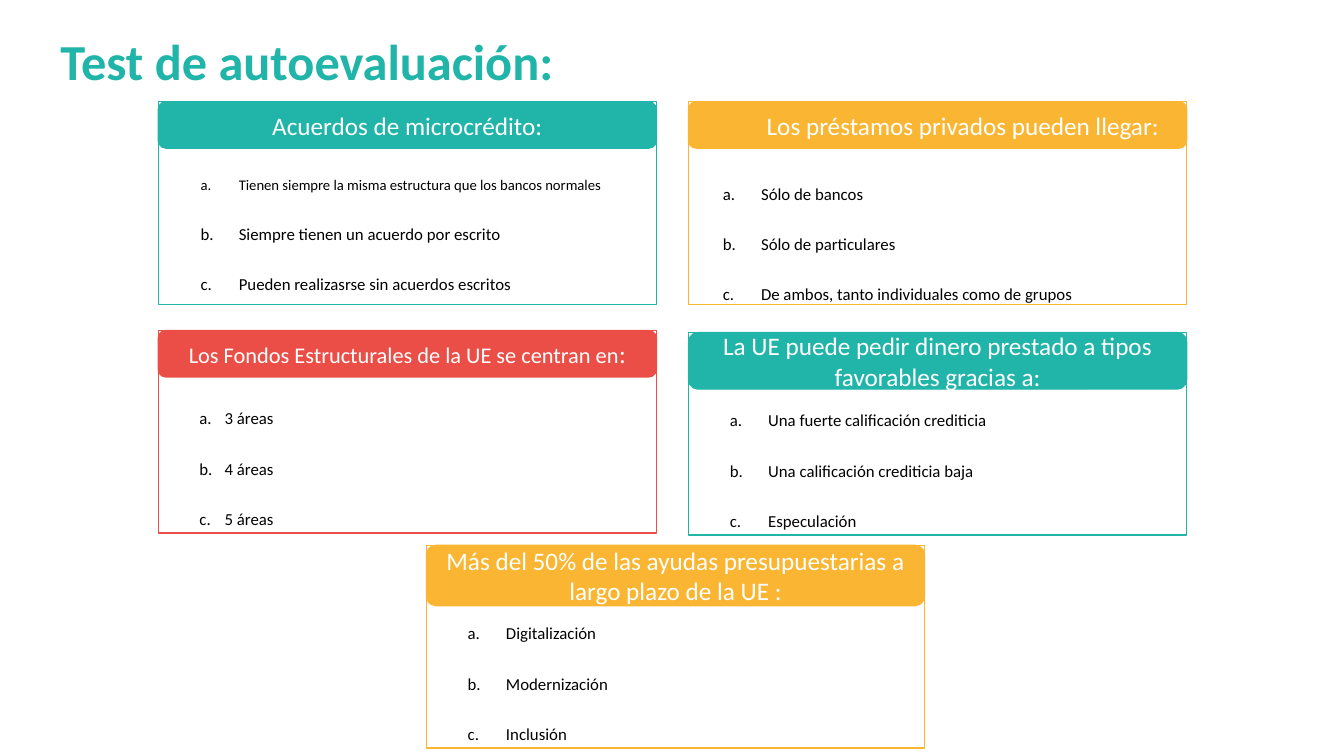
from lxml import etree
from pptx import Presentation
from pptx.dml.color import RGBColor
from pptx.enum.shapes import MSO_SHAPE
from pptx.enum.text import MSO_ANCHOR, PP_ALIGN
from pptx.oxml.ns import qn
from pptx.util import Inches, Pt

RECTANGLE = MSO_SHAPE.RECTANGLE
ROUNDED = MSO_SHAPE.ROUNDED_RECTANGLE
MIDDLE = MSO_ANCHOR.MIDDLE
CENTER = PP_ALIGN.CENTER

COLORS = {"teal": "21B4A9", "amber": "FAB632", "red": "EA4E46",
          "white": "FFFFFF", "black": "000000"}
CARD_WIDTH, CARD_HEIGHT = 4.94, 2.01
LEFT_COLUMN, RIGHT_COLUMN, CENTER_COLUMN = 1.57, 6.83, 4.23

# Each question: header runs and options are (text, size) pairs;
# options_box is the offset from the card's corner, then width and height
QUESTIONS = [
    dict(left=LEFT_COLUMN, top=1.01, color="teal", header_height=0.46,
         header=[("Acuerdos de microcrédito:", 18)],
         options_box=(0.32, 0.36, 4.21, 1.53),
         options=[("Tienen siempre la misma estructura que los bancos normales", 10.5),
                  ("Siempre tienen un acuerdo por escrito", 12),
                  ("Pueden realizasrse sin acuerdos escritos", 12)]),
    dict(left=RIGHT_COLUMN, top=1.01, color="amber", header_height=0.46,
         header=[("Los préstamos privados pueden llegar:", 18)], header_indent=0.5,
         options_box=(0.24, 0.46, 4.62, 1.53),
         options=[("Sólo de bancos", 12), ("Sólo de particulares", 12),
                  ("De ambos, tanto individuales como de grupos", 12)]),
    dict(left=LEFT_COLUMN, top=3.28, color="red", header_height=0.46,
         header=[("Los Fondos Estructurales de la UE se centran en", 16), (":", 18)],
         options_box=(0.31, 0.42, 1.77, 1.55), hanging=0.25,
         options=[("3 áreas", 12), ("4 áreas", 12), ("5 áreas", 12)]),
    dict(left=RIGHT_COLUMN, top=3.3, color="teal", header_height=0.56,
         header=[("La UE puede pedir dinero prestado a tipos favorables gracias a:", 18)],
         options_box=(0.31, 0.42, 3.59, 1.55),
         options=[("Una fuerte calificación crediticia", 12),
                  ("Una calificación crediticia baja", 12), ("Especulación", 12)]),
    dict(left=CENTER_COLUMN, top=5.41, color="amber", header_height=0.6,
         header=[("Más del 50% de las ayudas presupuestarias a largo plazo de la UE :", 18)],
         options_box=(0.31, 0.42, 3.29, 1.55),
         options=[("Digitalización", 12), ("Modernización", 12), ("Inclusión", 12)]),
]


class QuizSlide:
    font = "Calibri"
    line_width = Pt(1)

    def __init__(self, slide):
        self.slide = slide

    def rgb(self, color):
        return RGBColor.from_string(COLORS[color])

    def run(self, paragraph, text, size, color, bold=False):
        run = paragraph.add_run()
        run.text = text
        run.font.name = self.font
        run.font.size = Pt(size)
        run.font.bold = bold
        run.font.color.rgb = self.rgb(color)

    def indent(self, paragraph, margin, first_line=0):
        properties = paragraph._p.get_or_add_pPr()
        properties.set("marL", str(Inches(margin)))
        properties.set("indent", str(Inches(first_line)))
        return properties

    def title(self, text, left, top, width, height):
        box = self.slide.shapes.add_textbox(
            Inches(left), Inches(top), Inches(width), Inches(height))
        frame = box.text_frame
        frame.word_wrap = True
        frame.vertical_anchor = MIDDLE
        frame.margin_left = frame.margin_right = 0
        frame.margin_top = frame.margin_bottom = 0
        self.run(frame.paragraphs[0], text, 36, "teal", bold=True)

    def panel(self, kind, left, top, height, color, filled):
        panel = self.slide.shapes.add_shape(
            kind, Inches(left), Inches(top), Inches(CARD_WIDTH), Inches(height))
        panel.shadow.inherit = False
        panel.line.color.rgb = self.rgb(color)
        panel.line.width = self.line_width
        if filled:
            panel.fill.solid()
            panel.fill.fore_color.rgb = self.rgb(color)
        else:
            panel.fill.background()
        return panel

    def header(self, left, top, height, color, runs, indent):
        bar = self.panel(ROUNDED, left, top, height, color, filled=True)
        frame = bar.text_frame
        frame.word_wrap = True
        frame.vertical_anchor = MIDDLE
        heading = frame.paragraphs[0]
        heading.alignment = CENTER
        if indent:
            heading.level = 1
            self.indent(heading, indent)
        for text, size in runs:
            self.run(heading, text, size, "white")

    def options(self, left, top, width, height, options, hanging):
        box = self.slide.shapes.add_textbox(
            Inches(left), Inches(top), Inches(width), Inches(height))
        frame = box.text_frame
        frame.word_wrap = True
        for index, (text, size) in enumerate(options):
            option = frame.add_paragraph() if index else frame.paragraphs[0]
            option.line_spacing = Pt(36)
            properties = self.indent(option, hanging, -hanging)
            etree.SubElement(properties, qn("a:buFont"), typeface="+mj-lt")
            etree.SubElement(properties, qn("a:buAutoNum"), type="alphaLcPeriod")
            self.run(option, text, size, "black")

    def question(self, left, top, color, header_height, header, options_box,
                 options, header_indent=0, hanging=0.38):
        self.panel(RECTANGLE, left, top, CARD_HEIGHT, color, filled=False)
        self.header(left, top, header_height, color, header, header_indent)
        dx, dy, width, height = options_box
        self.options(left + dx, top + dy, width, height, options, hanging)


def main():
    deck = Presentation()
    deck.slide_width, deck.slide_height = Inches(13.33), Inches(7.5)
    quiz = QuizSlide(deck.slides.add_slide(deck.slide_layouts[6]))

    # Title
    quiz.title("Test de autoevaluación:", 0.6, 0.29, 9.02, 0.61)

    # Question cards
    for question in QUESTIONS:
        quiz.question(**question)

    deck.save("out.pptx")


if __name__ == "__main__":
    main()
